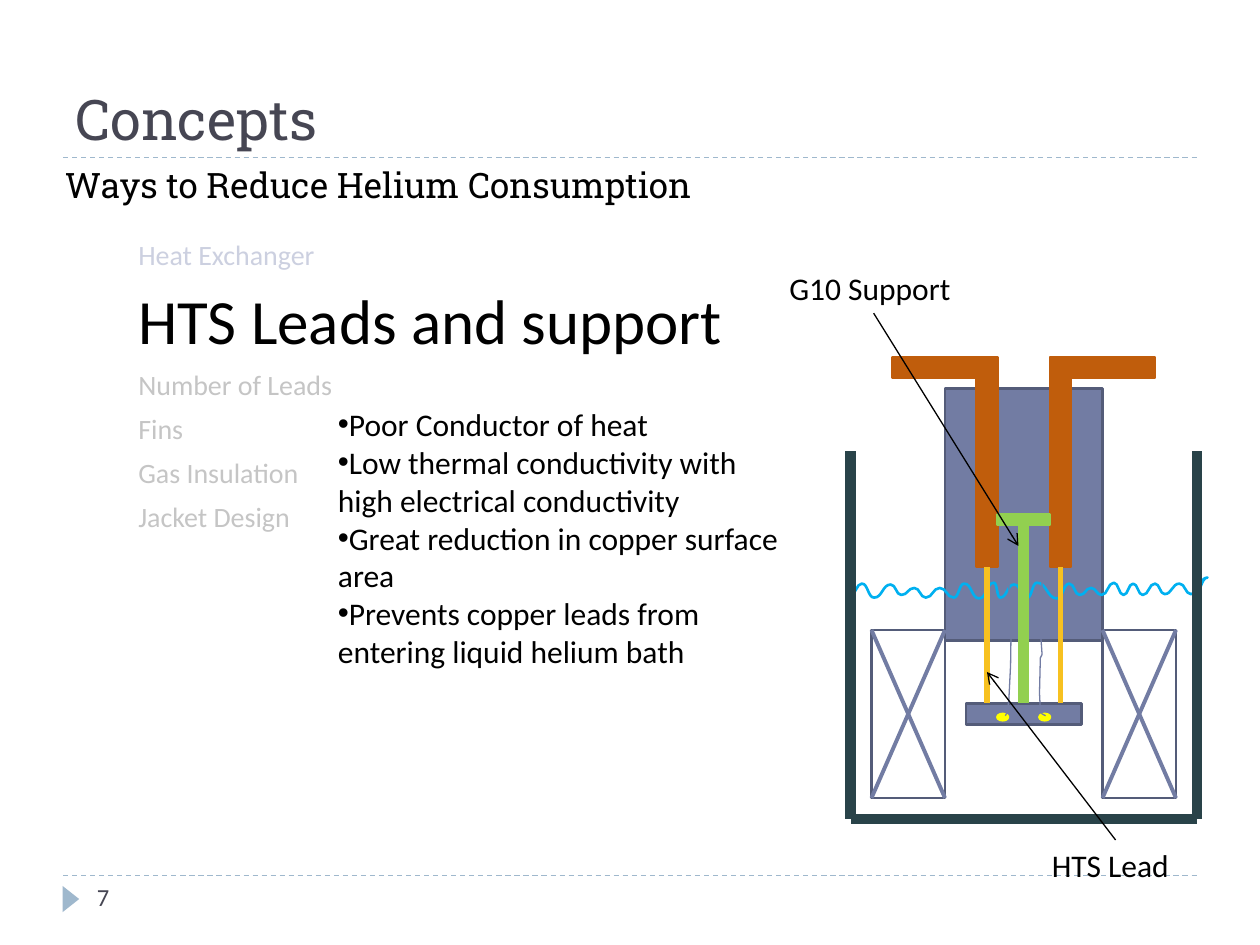
from pptx import Presentation
from pptx.util import Pt
from pptx.dml.color import RGBColor
from pptx.enum.dml import MSO_LINE
from pptx.enum.shapes import MSO_CONNECTOR, MSO_SHAPE
from pptx.enum.text import MSO_ANCHOR
from pptx.oxml.ns import qn
from lxml.etree import SubElement

STEEL, EDGE, WALL = "727CA3", "545C79", "294349"
COPPER, GOLD, GREEN, YELLOW = "C05D0C", "F7C120", "92D050", "FFFF00"
BLACK, SLATE, PALE, GRAY = "000000", "464653", "CCD0E0", "C5C5C5"
SOFT, WATER = "9FB8CD", "00B0F0"
WAVE = [(0, 136), (6.5, 129.5), (13.5, 137.5), (23, 130), (29, 136),
        (36.5, 132), (43, 137.5), (51, 132), (59, 137.5), (65, 129.5),
        (73.5, 138), (82, 129), (85.5, 137.5), (93.5, 130), (101, 137.5),
        (106.5, 129), (118, 138), (125, 129.5), (131, 136), (137.5, 132),
        (143.5, 136), (150.5, 129), (156, 136), (161.5, 129.5), (167, 136),
        (174, 129.5), (179.5, 135.5), (188, 129.5), (194.5, 135.5),
        (204, 126), (196.5, 135.5)]
WIRES = [[(88.5, 205), (89.5, 203), (90.5, 196), (91.5, 176), (92, 140),
          (90.5, 132), (91.5, 101), (92, 99), (91.5, 88), (91, 73),
          (90, 69), (88.5, 60)],
         [(111.5, 205), (109.5, 204), (108.5, 202), (108, 192), (108.5, 172),
          (109.5, 170), (108.5, 156), (109.5, 153), (109.5, 125), (108, 106),
          (108.5, 94), (109.5, 92), (108, 84), (108.5, 60)]]


def tint(code):
    return RGBColor.from_string(code)


def apply(item, form):
    for key, val in form.items():
        setattr(item, key, val)


def stroke(line, color, width):
    line.color.rgb = tint(color)
    line.width = Pt(width)


def block(slide, box, fill, edge, kind=MSO_SHAPE.RECTANGLE, width=1.5):
    shape = slide.shapes.add_shape(kind, *map(Pt, box))
    shape.shadow.inherit = False
    shape.fill.solid()
    shape.fill.fore_color.rgb = tint(fill)
    if edge:
        stroke(shape.line, edge, width)
    else:
        shape.line.fill.background()
    return shape


def link(slide, start, end, color, width, arrow=False):
    line = slide.shapes.add_connector(
        MSO_CONNECTOR.STRAIGHT, *map(Pt, (*start, *end)))
    stroke(line.line, color, width)
    SubElement(line._element.spPr, qn("a:effectLst"))
    if arrow:
        SubElement(line.line._get_or_add_ln(), qn("a:tailEnd"), type="arrow")
    return line


def curve(slide, dots, color, width):
    first, *rest = [(Pt(x), Pt(y)) for x, y in dots]
    path = slide.shapes.build_freeform(*first)
    path.add_line_segments(rest, close=False)
    shape = path.convert_to_shape()
    shape.shadow.inherit = False
    shape.fill.background()
    stroke(shape.line, color, width)
    bend(shape)


def bend(shape):
    tall = shape.height > shape.width
    track = next(shape._element.iter(qn("a:path")))
    a, b = None, None
    for leg in list(track):
        spot = leg[0]
        c, d = int(spot.get("x")), int(spot.get("y"))
        if a is not None:
            mid = (b + d) // 2 if tall else (a + c) // 2
            pulls = ((a, mid), (c, mid)) if tall else ((mid, b), (mid, d))
            arc = SubElement(track, qn("a:cubicBezTo"))
            for x, y in (*pulls, (c, d)):
                SubElement(arc, qn("a:pt"), x=str(x), y=str(y))
            track.remove(leg)
        a, b = c, d


def write(slide, box, rows, font="Calibri", wrap=True, bullet=False,
          anchor=MSO_ANCHOR.TOP, form=None):
    frame = slide.shapes.add_textbox(*map(Pt, box)).text_frame
    apply(frame, {"word_wrap": wrap, "vertical_anchor": anchor})
    for i, (text, size, color) in enumerate(rows):
        para = frame.add_paragraph() if i else frame.paragraphs[0]
        apply(para, form or {})
        run = para.add_run()
        run.text = text
        apply(run.font, {"name": font, "size": Pt(size)})
        run.font.color.rgb = tint(color)
        props = para._p.get_or_add_pPr()
        if bullet:
            SubElement(props, qn("a:buFont"), typeface="Arial")
            SubElement(props, qn("a:buChar"), char="•")
        elif form:
            props.set("marL", str(Pt(21.6)))
            props.set("indent", str(-Pt(21.6)))
            SubElement(props, qn("a:buNone"))


def head(slide, box):
    x, y, w, h = box
    rule = link(slide, (x, y + h), (x + w, y + h), SOFT, 0.75)
    rule.line.dash_style = MSO_LINE.DASH
    write(slide, box, [("Concepts", 32, SLATE)], "Roboto Slab",
          anchor=MSO_ANCHOR.BOTTOM)
    write(slide, (x - 6, y + h, 486, 32),
          [("Ways to Reduce Helium Consumption", 20, BLACK)], "Roboto Slab")


def foot(slide, box):
    x, y, w, h = box
    rule = link(slide, (x, y), (x + w, y), SOFT, 0.75)
    rule.line.dash_style = MSO_LINE.DASH
    mark = block(slide, (x - 3, y + 8.5, 15, 9.5), SOFT, None,
                 MSO_SHAPE.ISOSCELES_TRIANGLE)
    mark.rotation = 90
    write(slide, (x + 12.25, y, 156, h), [("7", 14, SLATE)])


def topics(slide, box):
    x, y, w, h = box
    rows = [("Heat Exchanger", 16, PALE), ("HTS Leads and support", 36, BLACK)]
    rows += [(text, 16, GRAY) for text in
             ("Number of Leads", "Fins", "Gas Insulation", "Jacket Design")]
    write(slide, box, rows, form={"space_before": Pt(6)})
    notes = ("Poor Conductor of heat",
             "Low thermal conductivity with high electrical conductivity",
             "Great reduction in copper surface area",
             "Prevents copper leads from entering liquid helium bath")
    write(slide, (x + 114, y + 96, 270, 204),
          [(text, 18, BLACK) for text in notes], bullet=True)


def tank(slide, box):
    x, y, w, h = box

    def at(a, b, *size):
        return (x + a, y + b, *size)

    def shift(dots):
        return [at(*dot) for dot in dots]

    block(slide, at(54, 18, 90, 144), STEEL, EDGE)
    curve(slide, shift(WAVE), WATER, 1.5)
    bars = []
    for bar, arm in ((72, 24), (114, 114)):
        bars.append(block(slide, at(bar, 12, 12, 108), COPPER, COPPER))
        block(slide, at(arm, 0, 60, 12), COPPER, COPPER)
    base = block(slide, at(66, 198, 66, 12), STEEL, EDGE)
    for a in (84, 108):
        block(slide, at(a, 204, 6, 3.6), YELLOW, YELLOW, MSO_SHAPE.OVAL)
    for wire in WIRES:
        curve(slide, shift(wire), STEEL, 0.75)
    for a in (0, w):
        link(slide, at(a, 54), at(a, h), WALL, 6)
    for a, b in ((6, w), (18, 0)):
        link(slide, at(a, h), at(b, h), WALL, 6)
    for a in (12, 144):
        block(slide, at(a, 156, 42, 96), "FFFFFF", EDGE)
        for b, c in ((156, 252), (252, 156)):
            link(slide, at(a, b), at(a + 42, c), STEEL, 2.25)
    for a, bar in zip((78, 120), bars):
        lead = link(slide, at(a, 120), at(a, 198), GOLD, 3)
        lead.begin_connect(bar, 2)
    cap = block(slide, at(84, 90, 30, 6), GREEN, GREEN)
    stem = link(slide, at(99, 96), at(99, 198), GREEN, 6)
    stem.begin_connect(cap, 2)
    stem.end_connect(base, 0)
    for text, spot, start, end in (
            ("HTS Lead", (108, 276, 86, 29), (151.5, 276), (78, 180)),
            ("G10 Support", (-42, -54, 110, 29), (13.25, -25), (96, 108))):
        link(slide, at(*start), at(*end), BLACK, 0.75, True)
        write(slide, at(*spot), [(text, 18, BLACK)], wrap=False)


def main():
    deck = Presentation()
    apply(deck, {"slide_width": Pt(720), "slide_height": Pt(540)})
    slide = deck.slides.add_slide(deck.slide_layouts[6])
    head(slide, (36, 12, 648, 78))
    foot(slide, (36, 500.5, 648, 29))
    topics(slide, (72, 132, 648, 356))
    tank(slide, (486, 204, 198, 264))
    deck.save("out.pptx")


if __name__ == "__main__":
    main()
